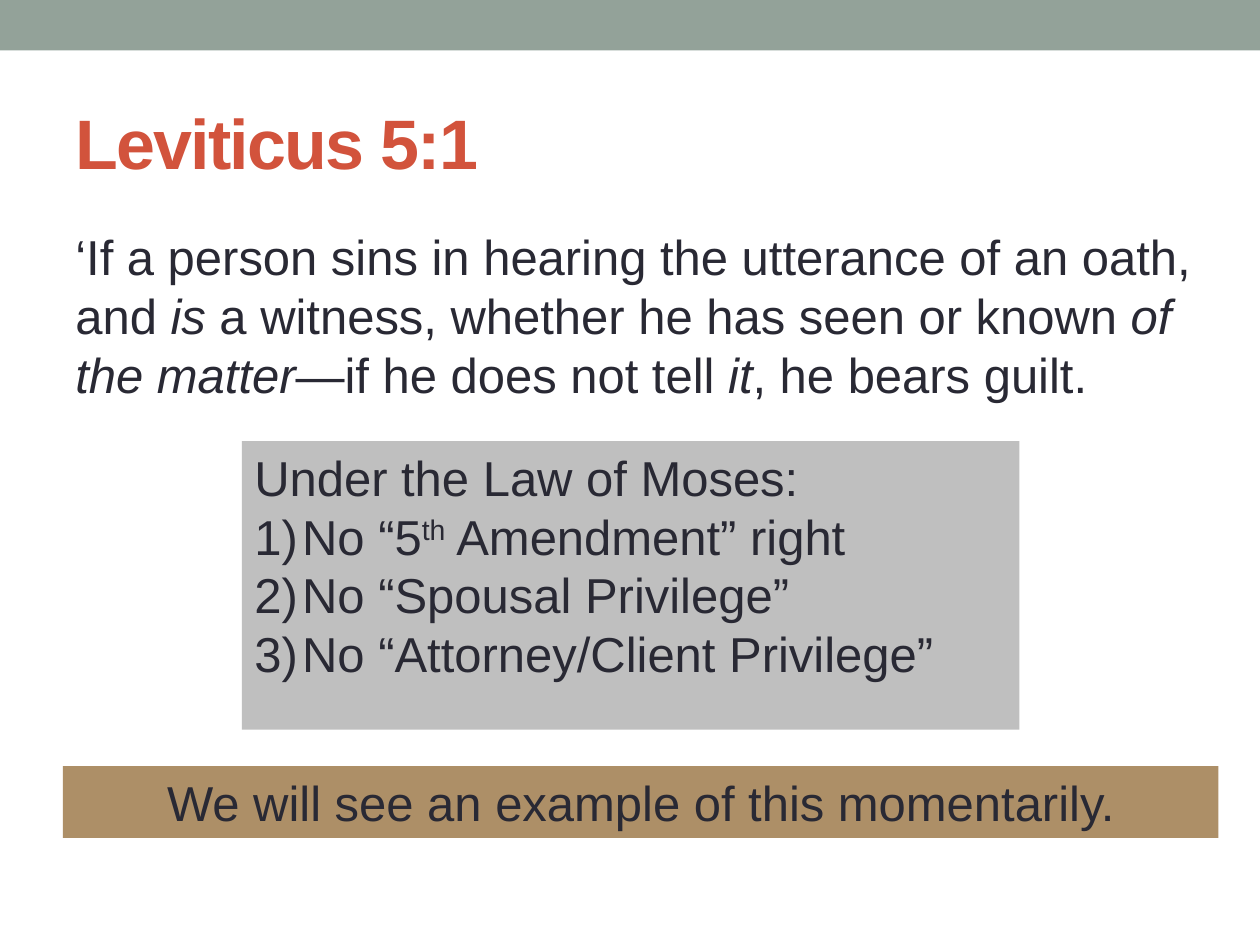
from lxml.etree import SubElement
from pptx import Presentation
from pptx.dml.color import RGBColor
from pptx.enum.shapes import MSO_SHAPE
from pptx.enum.text import MSO_ANCHOR, PP_ALIGN
from pptx.oxml.ns import qn
from pptx.util import Inches, Pt

INK = "292934"
VERSE = [
    ("‘If a person sins in hearing the utterance of an oath, and ", False),
    ("is", True),
    (" a witness, whether he has seen or known ", False),
    ("of the matter", True),
    ("—if he does not tell ", False),
    ("it", True),
    (", he bears guilt.", False),
]
LAW_HEADING = "Under the Law of Moses:"
LAW_POINTS = [
    ["No “5", "th", " Amendment” right"],
    ["No “Spousal Privilege”"],
    ["No “Attorney/Client Privilege”"],
]


def color(hex_value):
    """Turn a hex string into a colour."""
    return RGBColor.from_string(hex_value)


def add_panel(slide, box, fill):
    """Add a filled, unlined rectangle and return its text frame."""
    panel = slide.shapes.add_shape(MSO_SHAPE.RECTANGLE, *map(Inches, box))
    panel.shadow.inherit = False
    panel.fill.solid()
    panel.fill.fore_color.rgb = color(fill)
    panel.line.fill.background()
    panel.text_frame.word_wrap = True
    panel.text_frame.vertical_anchor = MSO_ANCHOR.TOP
    return panel.text_frame


def add_text_area(slide, box, anchor):
    """Add a wrapping text box and return its text frame."""
    frame = slide.shapes.add_textbox(*map(Inches, box)).text_frame
    frame.word_wrap = True
    frame.vertical_anchor = anchor
    return frame


def add_run(paragraph, text, size=28, ink=INK):
    """Append a run in the slide's typeface."""
    run = paragraph.add_run()
    run.text = text
    run.font.name = "Arial"
    run.font.size = Pt(size)
    run.font.color.rgb = color(ink)
    return run


def number_paragraph(paragraph):
    """Give a paragraph a hanging number followed by a parenthesis."""
    properties = paragraph._p.get_or_add_pPr()
    properties.set("marL", str(Inches(0.38)))
    properties.set("indent", str(-Inches(0.38)))
    SubElement(properties, qn("a:buFont"), typeface="Arial")
    SubElement(properties, qn("a:buAutoNum"), type="arabicParenR")


def add_title(slide, box):
    """Place the scripture reference."""
    paragraph = add_text_area(slide, box, MSO_ANCHOR.MIDDLE).paragraphs[0]
    reference = add_run(paragraph, "Leviticus 5:1", 40, "D2533C")
    reference.font.bold = True
    reference.font._element.set("spc", "-100")


def add_verse(slide, box):
    """Place the verse with its italic words."""
    paragraph = add_text_area(slide, box, MSO_ANCHOR.TOP).paragraphs[0]
    paragraph.space_before = Pt(5.6)
    for text, italic in VERSE:
        add_run(paragraph, text).font.italic = italic


def add_law_panel(slide, box):
    """Place the numbered points on the law of Moses."""
    frame = add_panel(slide, box, "BFBFBF")
    heading = frame.paragraphs[0]
    heading.alignment = PP_ALIGN.LEFT
    add_run(heading, LAW_HEADING)
    for parts in LAW_POINTS:
        point = frame.add_paragraph()
        point.alignment = PP_ALIGN.LEFT
        number_paragraph(point)
        for part in parts:
            run = add_run(point, part)
            if part == "th":
                run.font._element.set("baseline", "30000")


def add_closing_bar(slide, box):
    """Place the centred closing remark."""
    remark = add_panel(slide, box, "AD8F67").paragraphs[0]
    remark.alignment = PP_ALIGN.CENTER
    add_run(remark, "We will see an example of this momentarily.")


def main():
    """Build and save the slide."""
    deck = Presentation()
    deck.slide_width, deck.slide_height = Inches(10), Inches(7.5)
    slide = deck.slides.add_slide(deck.slide_layouts[6])
    add_panel(slide, (0, 0, 10, 0.4), "93A299")
    add_title(slide, (0.5, 0.58, 9, 1.08))
    add_verse(slide, (0.5, 1.75, 9.17, 1.67))
    add_law_panel(slide, (1.92, 3.5, 6.17, 2.29))
    add_closing_bar(slide, (0.5, 6.08, 9.17, 0.57))
    deck.save("out.pptx")


if __name__ == "__main__":
    main()
